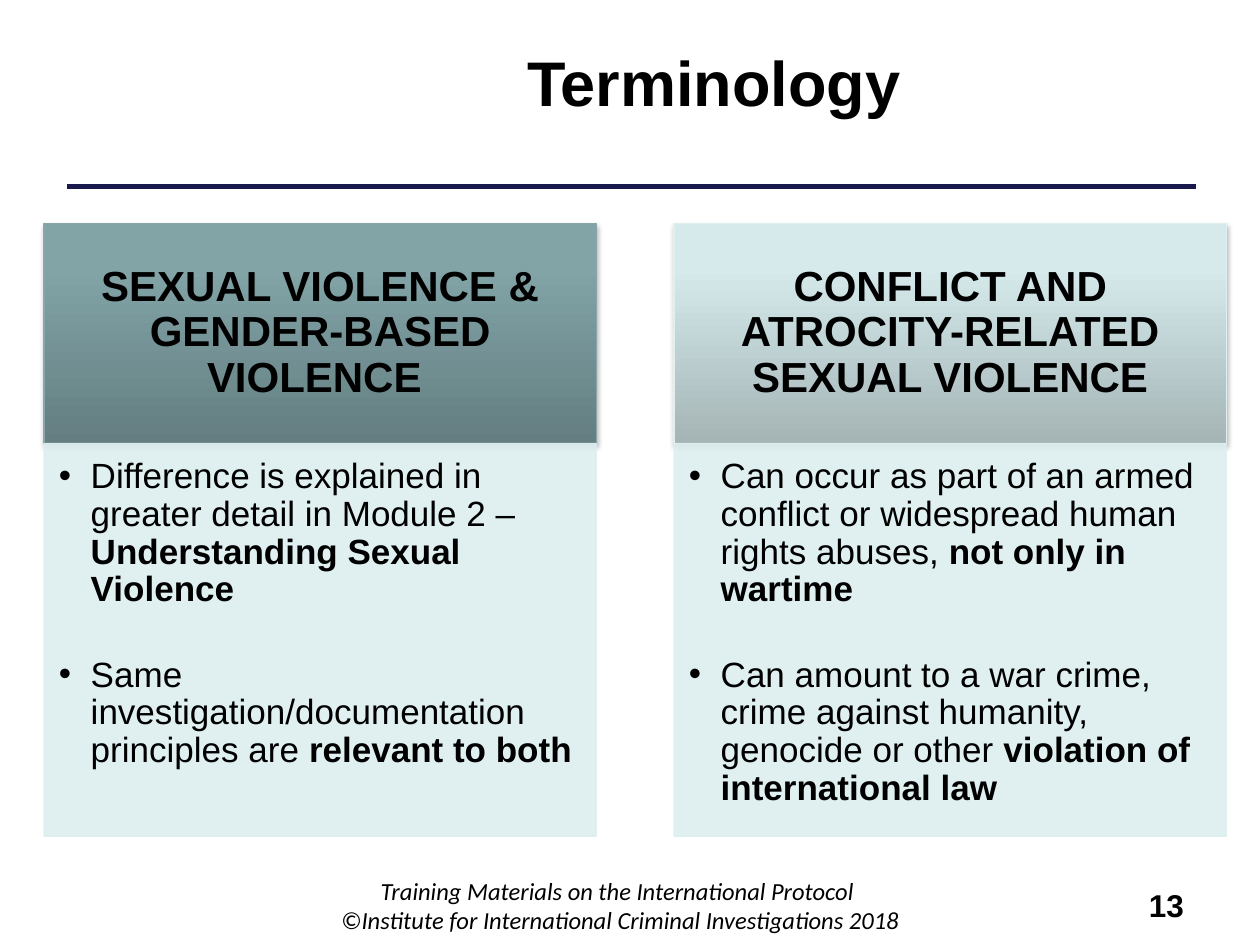
"""Build the Terminology slide with two headed columns of bullet points."""
from copy import deepcopy

from lxml.etree import SubElement
from pptx import Presentation
from pptx.dml.color import RGBColor
from pptx.enum.shapes import MSO_CONNECTOR as Connector, MSO_SHAPE as Preset
from pptx.enum.text import MSO_ANCHOR as Anchor, PP_ALIGN as Align
from pptx.oxml.ns import qn
from pptx.util import Cm, Pt

COLORS = {"rule": "19194D", "text": "000000", "panel": "DDEFF0"}
COLUMNS = [
    {
        "heading": "SEXUAL VIOLENCE & GENDER-BASED VIOLENCE ",
        "gradient": ["647E81", "82A4A7", "82A6A9"],
        "border": "8AA6A8",
        "points": [
            ("Difference is explained in greater detail in Module 2 – ", "Understanding Sexual Violence"),
            ("Same investigation/documentation principles are ", "relevant to both"),
        ],
    },
    {
        "heading": "CONFLICT AND ATROCITY-RELATED SEXUAL VIOLENCE",
        "gradient": ["A5B5B6", "D6EAEC", "D6ECEE"],
        "border": "DFF0F1",
        "points": [
            ("Can occur as part of an armed conflict or widespread human rights abuses, ", "not only in wartime"),
            ("Can amount to a war crime, crime against humanity, genocide or other ", "violation of international law"),
        ],
    },
]


def style(font, **values):
    font.color.rgb = RGBColor.from_string(COLORS["text"])
    for name, value in values.items():
        setattr(font, name, value)


def set_frame(frame, anchor, insets):
    frame.word_wrap = True
    frame.vertical_anchor = anchor
    for side, inset in zip(("left", "top", "right", "bottom"), insets):
        setattr(frame, f"margin_{side}", Cm(inset))


prs = Presentation()
prs.slide_width, prs.slide_height = Cm(25.4), Cm(19.05)
slide = prs.slides.add_slide(prs.slide_layouts[5])

title = slide.shapes.title
title.left, title.top, title.width, title.height = Cm(4.09), Cm(0.74), Cm(20.6), Cm(1.78)
title.text_frame.text = "Terminology"
title.text_frame.vertical_anchor = Anchor.MIDDLE
title.text_frame.paragraphs[0].alignment = Align.CENTER
style(title.text_frame.paragraphs[0].runs[0].font, name="Arial", size=Pt(36), bold=True)

rule = slide.shapes.add_connector(Connector.STRAIGHT, Cm(24.1), Cm(3.76), Cm(1.35), Cm(3.76))
rule.line.color.rgb = RGBColor.from_string(COLORS["rule"])
rule.line.width = Pt(2.5)
SubElement(rule._element.spPr, qn("a:effectLst"))

footer = slide.shapes.add_textbox(Cm(5.89), Cm(17.53), Cm(13.23), Cm(1.4)).text_frame
footer.word_wrap = True
footer.text = ("Training Materials on the International Protocol \n"
               "©Institute for International Criminal Investigations 2018")
for line in footer.paragraphs:
    line.alignment = Align.CENTER
    style(line.runs[0].font, name="Calibri", size=Pt(14), italic=True)

page_number = slide.shapes.add_textbox(Cm(22.91), Cm(17.73), Cm(2.01), Cm(1.02)).text_frame
page_number.word_wrap = True
page_number.text = "13"
style(page_number.paragraphs[0].runs[0].font, name="Arial", size=Pt(18), bold=True)

for index, column in enumerate(COLUMNS):
    left = Cm(0.89 + 12.7 * index)

    header = slide.shapes.add_shape(Preset.RECTANGLE, left, Cm(4.5), Cm(11.13), Cm(4.44))
    header.fill.gradient()
    header.fill.gradient_angle = 90
    stops = header._element.spPr.find(".//" + qn("a:gsLst"))
    stops.append(deepcopy(stops[0]))
    for stop, position, color in zip(header.fill.gradient_stops, (0, 0.8, 1), column["gradient"]):
        stop.position = position
        stop.color.rgb = RGBColor.from_string(color)
    header.line.color.rgb = RGBColor.from_string(column["border"])
    header.line.width = Pt(0.75)
    header.shadow.inherit = False
    shadow = SubElement(header._element.spPr.find(qn("a:effectLst")), qn("a:outerShdw"),
                        blurRad=str(Pt(3.1)), dist=str(Pt(1.8)), dir="5400000", rotWithShape="0")
    shade = SubElement(shadow, qn("a:srgbClr"), val=COLORS["text"])
    SubElement(shade, qn("a:alpha"), val="35000")
    set_frame(header.text_frame, Anchor.MIDDLE, (0.48, 0.28, 0.48, 0.28))
    heading = header.text_frame.paragraphs[0]
    heading.text = column["heading"]
    heading.alignment = Align.CENTER
    heading.line_spacing = 0.9
    style(heading.runs[0].font, name="Arial", size=Pt(24), bold=True)

    panel = slide.shapes.add_shape(Preset.RECTANGLE, left, Cm(8.94), Cm(11.13), Cm(7.92))
    panel.fill.solid()
    panel.fill.fore_color.rgb = RGBColor.from_string(COLORS["panel"])
    panel.line.color.rgb = RGBColor.from_string(COLORS["panel"])
    panel.line.width = Pt(0.75)
    panel.shadow.inherit = False
    for tint in panel._element.spPr.iter(qn("a:srgbClr")):
        SubElement(tint, qn("a:alpha"), val="90000")
    body = panel.text_frame
    set_frame(body, Anchor.TOP, (0.3, 0.3, 0.41, 0.43))
    for number, (plain, strong) in enumerate(column["points"]):
        point = body.add_paragraph() if number else body.paragraphs[0]
        point.alignment = Align.LEFT
        point.line_spacing = 0.9
        point.space_after = Pt(0 if number else 27)
        bullet = point._p.get_or_add_pPr()
        bullet.set("marL", str(Cm(0.64)))
        bullet.set("indent", str(-Cm(0.64)))
        SubElement(bullet, qn("a:buFont"), typeface="Arial")
        SubElement(bullet, qn("a:buChar"), char="•")
        for words, bold in ((plain, False), (strong, True)):
            run = point.add_run()
            run.text = words
            style(run.font, name="Arial", size=Pt(20), bold=bold)

prs.save("out.pptx")
